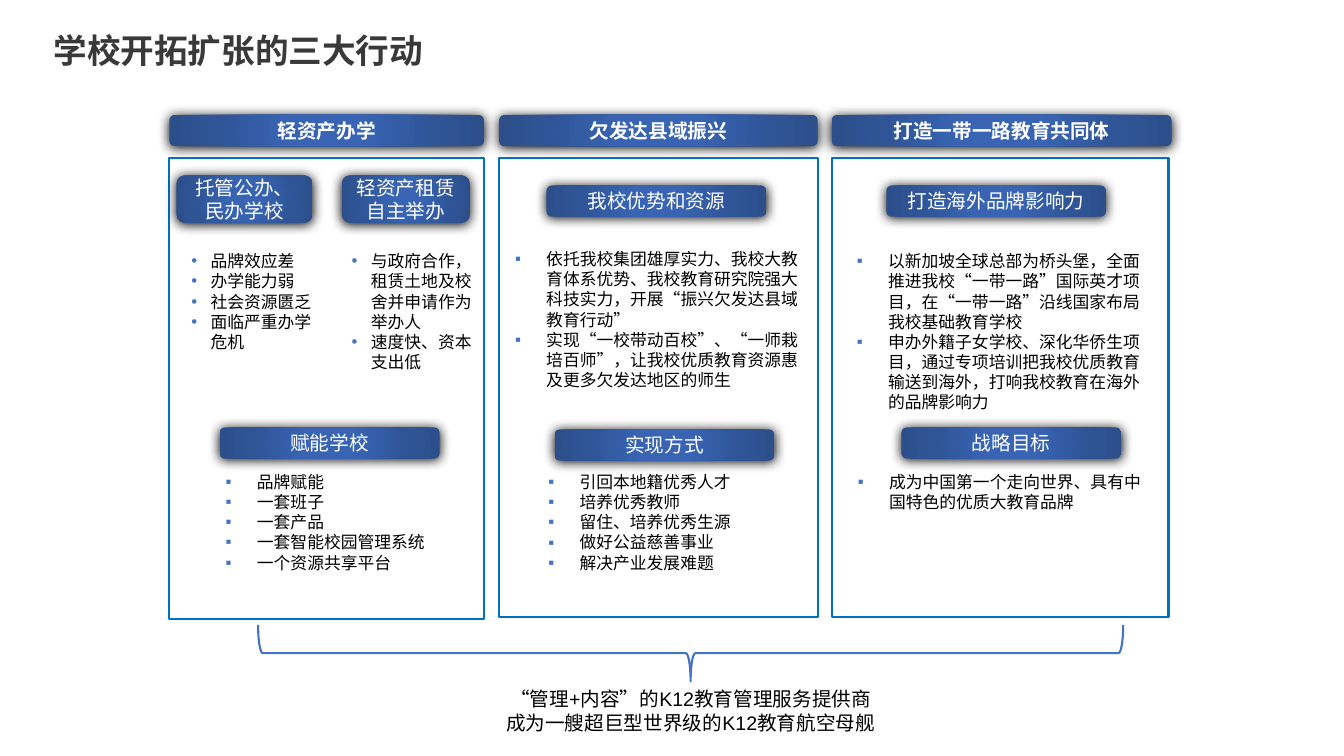
from lxml.etree import SubElement
from pptx import Presentation
from pptx.dml.color import RGBColor
from pptx.enum.lang import MSO_LANGUAGE_ID as Language
from pptx.enum.shapes import MSO_SHAPE as Shape
from pptx.enum.text import MSO_ANCHOR as Anchor, PP_ALIGN as Align
from pptx.oxml import parse_xml
from pptx.oxml.ns import nsdecls, qn
from pptx.util import Inches, Pt

COLORS = {
    "title": "393939", "text": "000000", "white": "FFFFFF",
    "border": "0070C0", "accent": "4472C4", "shadow": "000000",
    "light": "3864B3", "medium": "2F5597", "dark": "2C4F8C",
}
CJK_FONT = "Noto Sans CJK SC"
GRADIENT = [(0, "light"), (23, "light"), (69, "medium"), (97, "dark")]
PILL_WIDTH, PILL_HEIGHT = 2.18, 0.31
HEADER_TOP, CARD_TOP = 1.14, 1.57

# Text formats
TITLE = {"size": Pt(24), "bold": True, "name": "Arial"}
HEADER = {"size": Pt(14), "bold": True, "name": CJK_FONT}
LABEL = {"size": Pt(14), "bold": False, "name": "Arial"}
BODY = {"size": Pt(12), "bold": False, "name": "Arial"}

# Bullet formats: character and hanging indent
DOT, SQUARE = ("•", 0.19), ("▪", 0.31)

# Columns: title, left, header width, card width, card height
COLUMNS = [
    ("轻资产办学", 1.68, 3.12, 3.12, 4.57),
    ("欠发达县域振兴", 4.95, 3.16, 3.16, 4.55),
    ("打造一带一路教育共同体", 8.25, 3.37, 3.34, 4.55),
]

# Section labels: text, left, top, width, height
LABELS = [
    ("托管公办、民办学校", 1.75, 1.74, 1.35, 0.47),
    ("轻资产租赁自主举办", 3.39, 1.74, 1.27, 0.47),
    ("我校优势和资源", 5.42, 1.84, PILL_WIDTH, PILL_HEIGHT),
    ("打造海外品牌影响力", 8.79, 1.84, PILL_WIDTH, PILL_HEIGHT),
    ("赋能学校", 2.18, 4.24, PILL_WIDTH, PILL_HEIGHT),
    ("实现方式", 5.5, 4.26, PILL_WIDTH, PILL_HEIGHT),
    ("战略目标", 8.94, 4.24, PILL_WIDTH, PILL_HEIGHT),
]

# Lists: bullet, left, top, width, height, items
LISTS = [
    (DOT, 1.8, 2.44, 1.44, 1.22,
     ["品牌效应差", "办学能力弱", "社会资源匮乏", "面临严重办学危机"]),
    (DOT, 3.39, 2.44, 1.44, 1.22,
     ["与政府合作，租赁土地及校舍并申请作为举办人", "速度快、资本支出低"]),
    (SQUARE, 5.01, 2.42, 3.04, 1.66,
     ["依托我校集团雄厚实力、我校大教育体系优势、我校教育研究院强大科技实力，"
      "开展“振兴欠发达县域教育行动”",
      "实现“一校带动百校”、“一师栽培百师”，让我校优质教育资源惠及更多欠发达地区的师生"]),
    (SQUARE, 8.4, 2.44, 3.04, 1.78,
     ["以新加坡全球总部为桥头堡，全面推进我校“一带一路”国际英才项目，"
      "在“一带一路”沿线国家布局我校基础教育学校",
      "申办外籍子女学校、深化华侨生项目，通过专项培训把我校优质教育输送到海外，"
      "打响我校教育在海外的品牌影响力"]),
    (SQUARE, 2.14, 4.63, 2.2, 1.14,
     ["品牌赋能", "一套班子", "一套产品", "一套智能校园管理系统", "一个资源共享平台"]),
    (SQUARE, 5.34, 4.63, 3.04, 1.22,
     ["引回本地籍优秀人才", "培养优秀教师", "留住、培养优秀生源",
      "做好公益慈善事业", "解决产业发展难题"]),
    (SQUARE, 8.41, 4.63, 3.04, 1.22,
     ["成为中国第一个走向世界、具有中国特色的优质大教育品牌"]),
]
SUMMARY = ["“管理+内容”的K12教育管理服务提供商", "成为一艘超巨型世界级的K12教育航空母舰"]


def color(name):
    return RGBColor.from_string(COLORS[name])


def box(*lengths):
    return [Inches(length) for length in lengths]


def add_text(paragraph, text, text_format, color_name):
    run = paragraph.add_run()
    run.text = text
    for attribute, value in text_format.items():
        setattr(run.font, attribute, value)
    run.font.language_id = Language.SIMPLIFIED_CHINESE
    run.font.color.rgb = color(color_name)
    SubElement(run.font._element, qn("a:ea"), typeface=CJK_FONT)


def add_bullet(paragraph, character, indent):
    properties = paragraph._p.get_or_add_pPr()
    properties.set("marL", str(Inches(indent)))
    properties.set("indent", str(-Inches(indent)))
    bullet_color = SubElement(properties, qn("a:buClr"))
    SubElement(bullet_color, qn("a:srgbClr"), val=COLORS["accent"])
    SubElement(properties, qn("a:buFont"), typeface="Arial")
    SubElement(properties, qn("a:buChar"), char=character)


def add_text_box(slide, position, lines, text_format, bullet=None):
    frame = slide.shapes.add_textbox(*box(*position)).text_frame
    frame.word_wrap = True
    for index, line in enumerate(lines):
        paragraph = frame.add_paragraph() if index else frame.paragraphs[0]
        if bullet:
            add_bullet(paragraph, *bullet)
        else:
            paragraph.alignment = Align.CENTER
        add_text(paragraph, line, text_format, "text")


def add_pill(slide, position, text, text_format):
    pill = slide.shapes.add_shape(Shape.ROUNDED_RECTANGLE, *box(*position))
    pill.line.fill.background()
    # Radial gradient and soft shadow
    stops = "".join(
        f'<a:gs pos="{percent * 1000}"><a:srgbClr val="{COLORS[name]}"/></a:gs>'
        for percent, name in GRADIENT)
    fill = parse_xml(
        f'<a:gradFill {nsdecls("a")}><a:gsLst>{stops}</a:gsLst><a:path path="circle">'
        '<a:fillToRect l="50000" t="50000" r="50000" b="50000"/></a:path></a:gradFill>')
    effects = parse_xml(
        f'<a:effectLst {nsdecls("a")}><a:outerShdw blurRad="{Pt(8.5)}" dist="{Pt(1)}" '
        f'dir="5400000"><a:srgbClr val="{COLORS["shadow"]}"/></a:outerShdw></a:effectLst>')
    properties = pill._element.spPr
    properties.find(qn("a:prstGeom")).addnext(fill)
    properties.append(effects)
    frame = pill.text_frame
    frame.word_wrap = True
    frame.vertical_anchor = Anchor.MIDDLE
    paragraph = frame.paragraphs[0]
    paragraph.alignment = Align.CENTER
    add_text(paragraph, text, text_format, "white")


def add_outline(slide, kind, position, color_name):
    shape = slide.shapes.add_shape(kind, *box(*position))
    shape.shadow.inherit = False
    shape.fill.background()
    shape.line.color.rgb = color(color_name)
    shape.line.width = Pt(1.5)
    return shape


def set_title(slide, text):
    title = slide.shapes.title
    title.left, title.top, title.width, title.height = box(0.53, 0.12, 9.96, 0.58)
    frame = title.text_frame
    frame.vertical_anchor = Anchor.BOTTOM
    for side in ("left", "top", "right", "bottom"):
        setattr(frame, f"margin_{side}", 0)
    paragraph = frame.paragraphs[0]
    paragraph.alignment = Align.LEFT
    paragraph.line_spacing = 0.9
    add_text(paragraph, text, TITLE, "title")


def main():
    presentation = Presentation()
    presentation.slide_width, presentation.slide_height = box(13.33, 7.5)
    slide = presentation.slides.add_slide(presentation.slide_layouts[5])
    set_title(slide, "学校开拓扩张的三大行动")

    # Column headers and cards
    for text, left, header_width, card_width, card_height in COLUMNS:
        add_pill(slide, (left, HEADER_TOP, header_width, PILL_HEIGHT), text, HEADER)
        add_outline(slide, Shape.FLOWCHART_PROCESS,
                    (left, CARD_TOP, card_width, card_height), "border")

    # Section labels and lists
    for text, *position in LABELS:
        add_pill(slide, position, text, LABEL)
    for bullet, *position, items in LISTS:
        add_text_box(slide, position, items, BODY, bullet)

    # Brace and summary
    brace = add_outline(slide, Shape.LEFT_BRACE, (6.57, 2.19, 0.56, 8.58), "accent")
    brace.rotation = 270
    add_text_box(slide, (3.34, 6.77, 7.02, 0.56), SUMMARY, LABEL)

    presentation.save("out.pptx")


if __name__ == "__main__":
    main()
